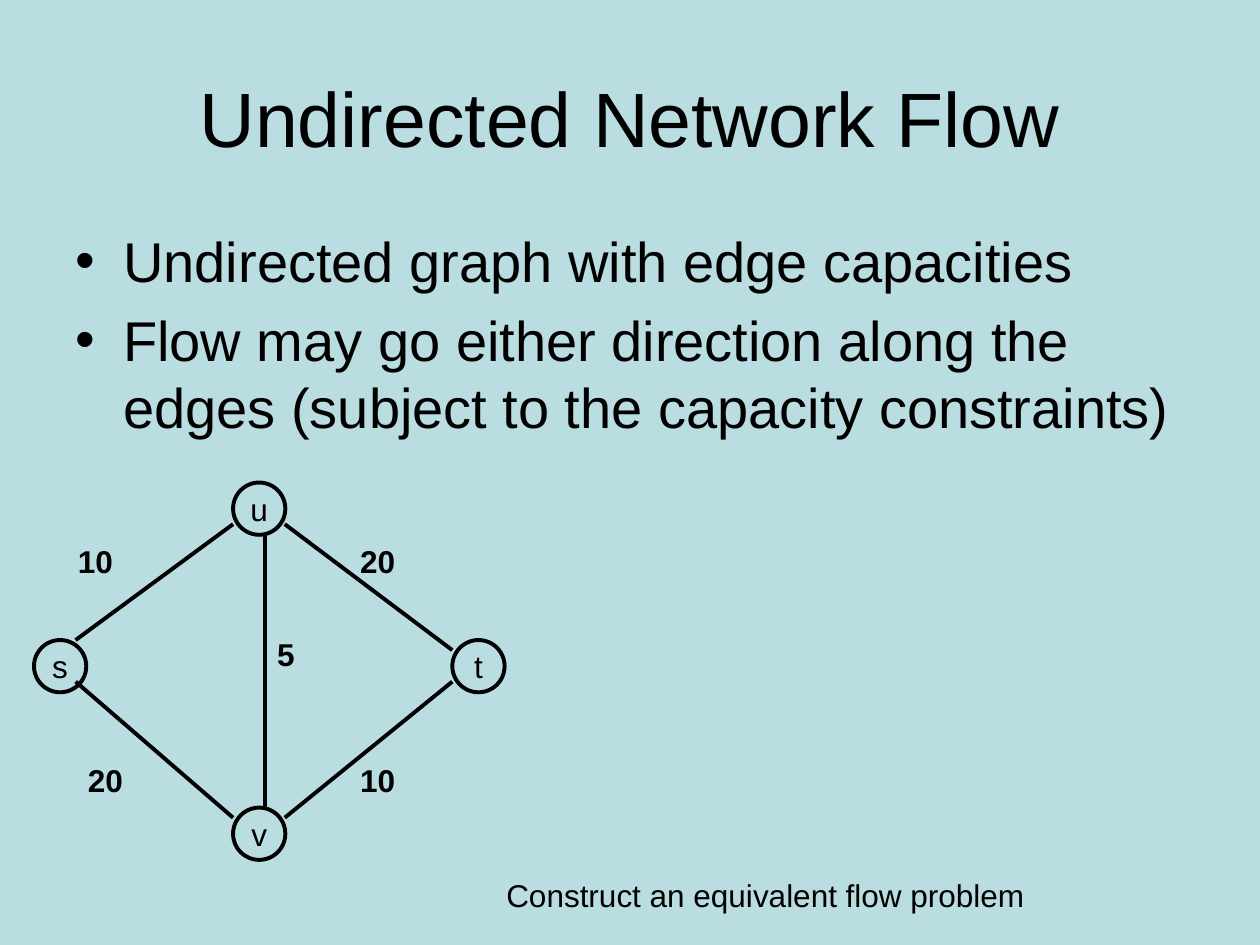
"""Build the slide on undirected network flow: title, bullets and a small graph."""
from lxml import etree
from pptx import Presentation
from pptx.dml.color import RGBColor
from pptx.enum.shapes import MSO_CONNECTOR, MSO_SHAPE
from pptx.enum.text import MSO_ANCHOR, PP_ALIGN
from pptx.oxml.ns import qn
from pptx.util import Inches, Pt

OVAL = MSO_SHAPE.OVAL
STRAIGHT = MSO_CONNECTOR.STRAIGHT
TOP, MIDDLE = MSO_ANCHOR.TOP, MSO_ANCHOR.MIDDLE
LEFT, CENTER = PP_ALIGN.LEFT, PP_ALIGN.CENTER
COLORS = {"back": "BADDE1", "ink": "000000"}
INK = RGBColor.from_string(COLORS["ink"])
FONT = "Arial"

prs = Presentation()
prs.slide_width, prs.slide_height = Inches(10), Inches(7.5)
COL, ROW = prs.slide_width / 100, prs.slide_height / 75
s = prs.slides.add_slide(prs.slide_layouts[6])
s.background.fill.solid()
s.background.fill.fore_color.rgb = RGBColor.from_string(COLORS["back"])


def grid(col, row, *size):
    cells = [col, row, *size]
    return [round(n * unit) for n, unit in zip(cells, (COL, ROW, COL, ROW))]


def write(sp, lines, size, align=LEFT, anchor=TOP, bold=False, wrap=True):
    tf = sp.text_frame
    tf.word_wrap = wrap
    tf.vertical_anchor = anchor
    for i, line in enumerate(lines):
        p = tf.paragraphs[0] if i == 0 else tf.add_paragraph()
        p.alignment = align
        r = p.add_run()
        r.text = line
        r.font.name, r.font.size, r.font.bold = FONT, Pt(size), bold
        r.font.color.rgb = INK
    return tf


title = s.shapes.add_textbox(*grid(5, 3, 90, 12.5))
write(title, ["Undirected Network Flow"], 44, CENTER, MIDDLE)

body = s.shapes.add_textbox(*grid(5, 17.5, 90, 49.5))
bullets = [
    "Undirected graph with edge capacities",
    "Flow may go either direction along the edges (subject to the capacity constraints)",
]
for p in write(body, bullets, 32).paragraphs:
    p.space_before = Pt(6.4)
    pPr = p._p.get_or_add_pPr()
    pPr.set("marL", str(Inches(0.38)))
    pPr.set("indent", str(-Inches(0.38)))
    etree.SubElement(pPr, qn("a:buFont")).set("typeface", FONT)
    etree.SubElement(pPr, qn("a:buChar")).set("char", "•")

NODE = 4.15
nodes = {"u": (18.5, 38.3), "s": (2.7, 50.8), "t": (35.9, 50.8), "v": (18.5, 64.1)}
for name, (col, row) in nodes.items():
    sp = s.shapes.add_shape(OVAL, *grid(col, row, NODE, NODE))
    sp.shadow.inherit = False
    sp.fill.background()
    sp.line.color.rgb = INK
    sp.line.width = Pt(2.25)
    write(sp, [name], 18, CENTER, MIDDLE, wrap=False)

edges = [
    ((6, 50.8), (18.5, 41.6)),
    ((6, 54.1), (18.5, 64.9)),
    ((21, 42.5), (21, 64.1)),
    ((22.6, 41.6), (35.9, 51.6)),
    ((22.6, 64.9), (35.9, 54.1)),
]
for start, end in edges:
    line = s.shapes.add_connector(STRAIGHT, *grid(*start), *grid(*end))
    line.line.color.rgb = INK
    line.line.width = Pt(2.25)
    etree.SubElement(line._element.spPr, qn("a:effectLst"))

capacities = [
    ("10", 5.2, 42.5, 10.8),
    ("10", 27.6, 59.9, 10.8),
    ("5", 21, 49.9, 9.1),
    ("20", 27.6, 42.5, 10),
    ("20", 6, 59.9, 8.3),
]
for value, col, row, width in capacities:
    write(s.shapes.add_textbox(*grid(col, row, width, 4)), [value], 18, bold=True)

task = s.shapes.add_textbox(*grid(39.2, 69, 50, 4))
write(task, ["Construct an equivalent flow problem"], 18)

prs.save("out.pptx")
